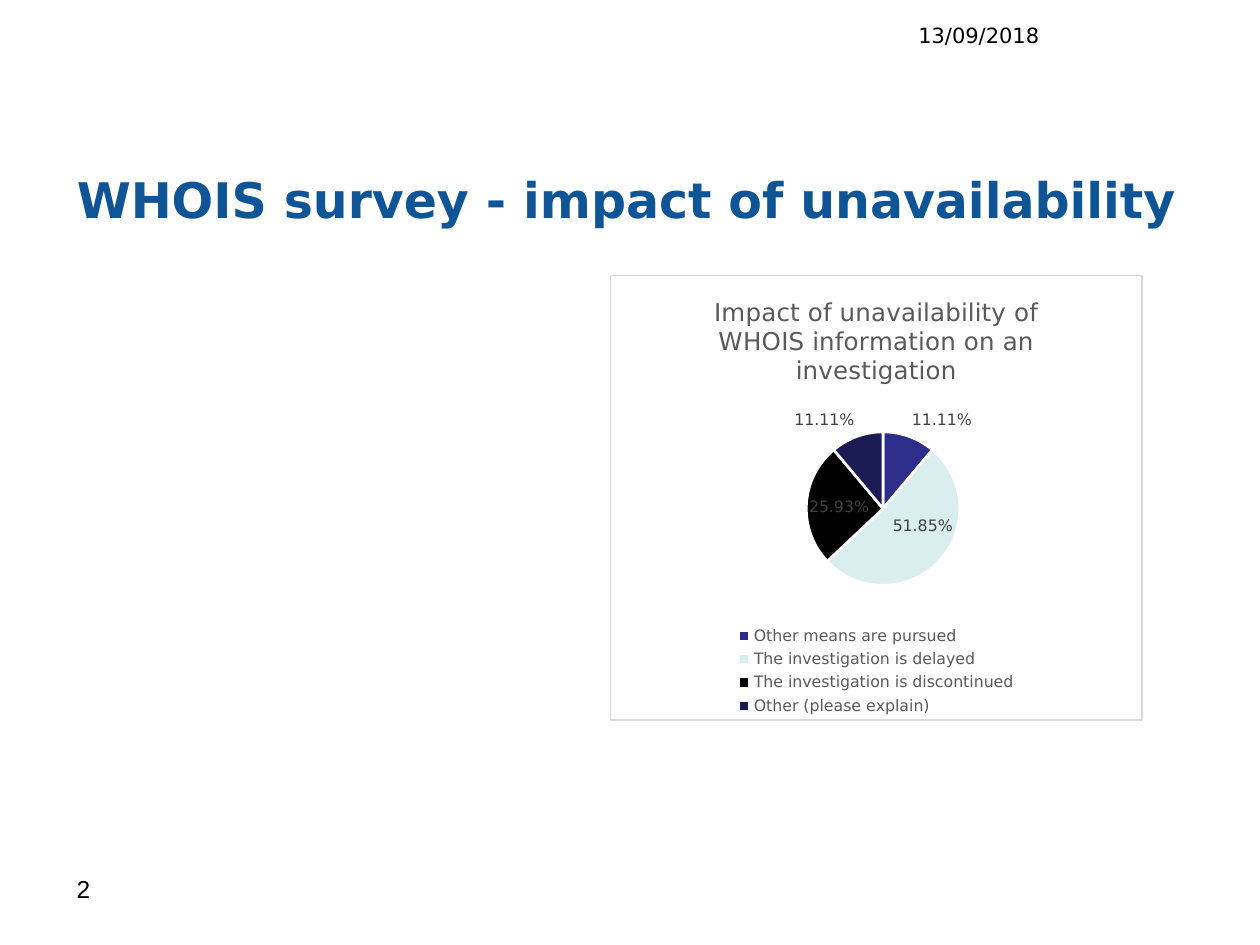
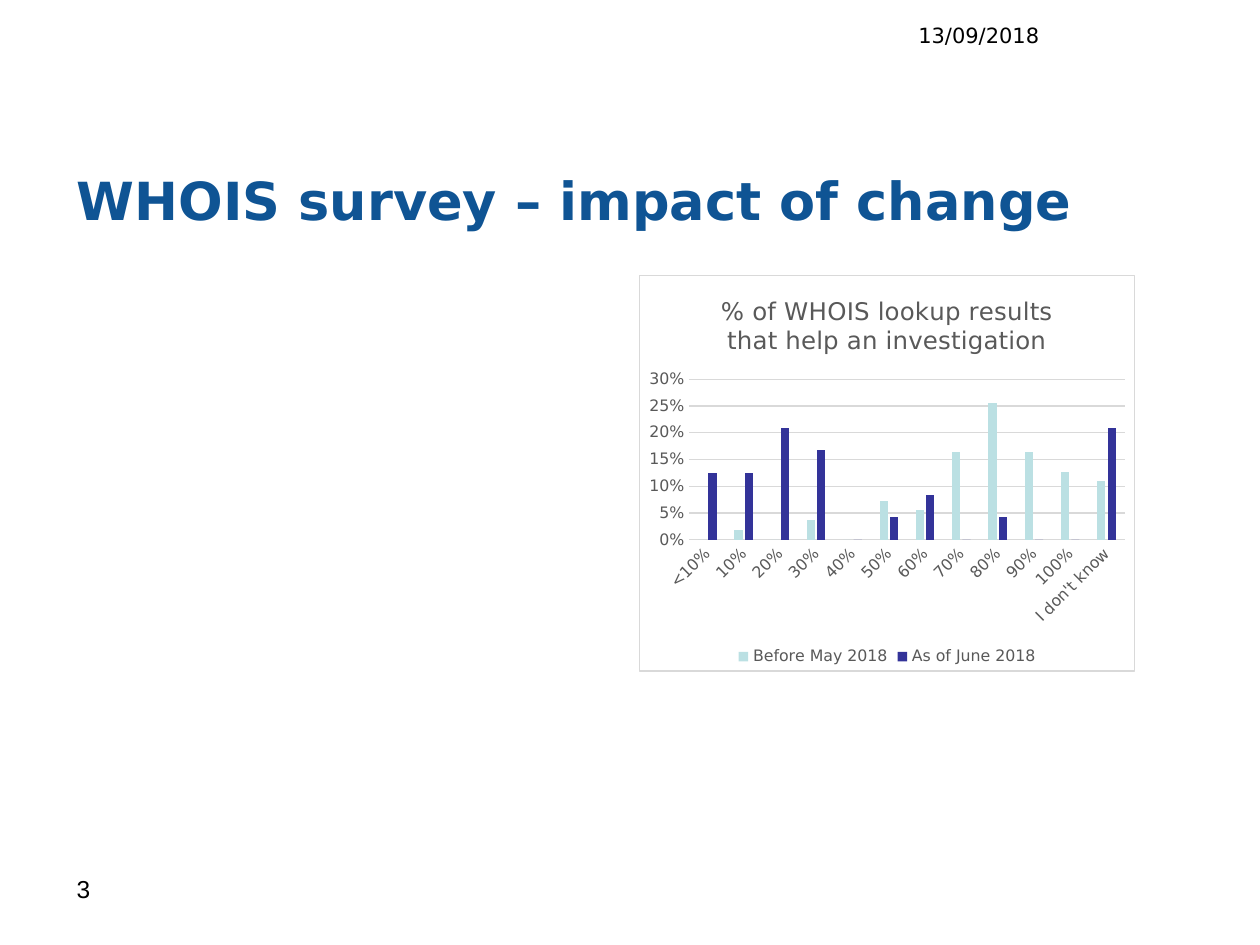
from collections import namedtuple
from dataclasses import dataclass

from lxml import etree
from pptx import Presentation
from pptx.chart import data as chart_data
from pptx.dml.color import RGBColor
from pptx.enum import chart as chart_enum, text
from pptx.oxml import parse_xml
from pptx.oxml.ns import nsdecls, qn
from pptx.util import Inches, Pt

Box = namedtuple("Box", "left top width height")


@dataclass(frozen=True)
class Theme:
    font: str = "DejaVu Sans"
    number_font: str = "Arial"
    title_color: str = "0F5494"
    ink: str = "000000"
    paper: str = "FFFFFF"
    chart_ink: str = "595959"
    label_ink: str = "404040"
    rule: str = "D9D9D9"
    slices: tuple = ("2D2D8A", "DAEDEF", "000000", "1B1B53")
    columns: tuple = ("BBE0E3", "333399")
    date_size: int = 12
    number_size: int = 14
    chart_title_size: int = 14
    chart_size: int = 10
    small_size: int = 9
    rule_width: float = 0.75


THEME = Theme()
TITLE_BOX = Box(0.51, 1.07, 9, 1.02)
DATE_BOX = Box(7.19, 0.13, 2.33, 0.52)
NUMBER_BOX = Box(0.51, 6.89, 2.33, 0.52)
DATE = "13/09/2018"

IMPACTS = {
    "Other means are pursued": 0.1111,
    "The investigation is delayed": 0.5185,
    "The investigation is discontinued": 0.2593,
    "Other (please explain)": 0.1111,
}
HELPFUL_SHARES = ["<10%", *(f"{share}%" for share in range(10, 101, 10)), "I don't know"]
LOOKUPS = {
    "Before May 2018": (0, 0.018, 0, 0.036, 0, 0.073, 0.055, 0.164, 0.255, 0.164, 0.127, 0.109),
    "As of June 2018": (0.125, 0.125, 0.208, 0.167, 0, 0.042, 0.083, 0, 0.042, 0, 0, 0.208),
}


def lengths(box):
    return [Inches(side) for side in box]


def style_font(font, size, color, name=THEME.font, bold=False):
    font.name, font.size, font.bold = name, Pt(size), bold
    font.color.rgb = RGBColor.from_string(color)


def fill_solid(fill, color):
    fill.solid()
    fill.fore_color.rgb = RGBColor.from_string(color)


def draw_line(line, color, width=THEME.rule_width):
    line.color.rgb = RGBColor.from_string(color)
    line.width = Pt(width)


def add_title(page, box, wording, size):
    title = page.shapes.title
    title.left, title.top, title.width, title.height = lengths(box)
    frame = title.text_frame
    frame.word_wrap = True
    frame.auto_size = text.MSO_AUTO_SIZE.NONE
    frame.vertical_anchor = text.MSO_ANCHOR.MIDDLE
    para = frame.paragraphs[0]
    para.alignment = text.PP_ALIGN.LEFT
    properties = para._p.get_or_add_pPr()
    properties.set("marL", str(Inches(0.39)))
    properties.set("indent", str(-Inches(0.39)))
    span = para.add_run()
    span.text = wording
    style_font(span.font, size, THEME.title_color, bold=True)


def add_note(page, box, wording, size, font):
    frame = page.shapes.add_textbox(*lengths(box)).text_frame
    frame.word_wrap = True
    span = frame.paragraphs[0].add_run()
    span.text = wording
    style_font(span.font, size, THEME.ink, font)


def add_page(deck, title, title_size, number):
    """Add a slide with the shared title, date and number."""
    page = deck.slides.add_slide(deck.slide_layouts.get_by_name("Title Only"))
    fill_solid(page.background.fill, THEME.paper)
    add_title(page, TITLE_BOX, title, title_size)
    add_note(page, DATE_BOX, DATE, THEME.date_size, THEME.font)
    add_note(page, NUMBER_BOX, str(number), THEME.number_size, THEME.number_font)
    return page


def frame_chart(chart):
    """Give the chart area a white fill, a thin border and square corners."""
    space = chart.element
    plot = space.find(qn("c:chart"))
    corners = space.find(qn("c:roundedCorners"))
    if corners is None:
        corners = etree.Element(qn("c:roundedCorners"))
        plot.addprevious(corners)
    corners.set("val", "0")
    plot.addnext(parse_xml(
        f'<c:spPr {nsdecls("c", "a")}>'
        f'<a:solidFill><a:srgbClr val="{THEME.paper}"/></a:solidFill>'
        f'<a:ln w="{Pt(THEME.rule_width)}"><a:solidFill>'
        f'<a:srgbClr val="{THEME.rule}"/></a:solidFill></a:ln></c:spPr>'))


def add_survey_chart(page, box, kind, title, categories, series, number_format):
    values = chart_data.CategoryChartData(number_format=number_format)
    values.categories = categories
    for name, shares in series.items():
        values.add_series(name, shares)
    chart = page.shapes.add_chart(kind, *lengths(box), values).chart
    frame_chart(chart)
    style_font(chart.font, THEME.chart_size, THEME.ink)
    chart.has_title = True
    span = chart.chart_title.text_frame.paragraphs[0].add_run()
    span.text = title
    style_font(span.font, THEME.chart_title_size, THEME.chart_ink)
    chart.chart_title.include_in_layout = False
    chart.has_legend = True
    chart.legend.position = chart_enum.XL_LEGEND_POSITION.BOTTOM
    chart.legend.include_in_layout = False
    style_font(chart.legend.font, THEME.small_size, THEME.chart_ink)
    return chart


def add_impact_pie(page, box):
    chart = add_survey_chart(
        page, box, chart_enum.XL_CHART_TYPE.PIE,
        "Impact of unavailability of WHOIS information on an investigation",
        list(IMPACTS), {"Series 1": list(IMPACTS.values())}, "0.00%")
    plot = chart.plots[0]
    plot.vary_by_categories = True
    for index, color in enumerate(THEME.slices):
        piece = plot.series[0].points[index].format
        fill_solid(piece.fill, color)
        draw_line(piece.line, THEME.paper, 1.5)
    labels = plot.series[0].data_labels
    labels.show_value = True
    labels.show_percentage = False
    labels.number_format = "0.00%"
    labels.number_format_is_linked = False
    labels.position = chart_enum.XL_LABEL_POSITION.BEST_FIT
    style_font(labels.font, THEME.small_size, THEME.label_ink)


def style_axis(axis):
    axis.major_tick_mark = axis.minor_tick_mark = chart_enum.XL_TICK_MARK.NONE
    style_font(axis.tick_labels.font, THEME.small_size, THEME.chart_ink)


def add_lookup_columns(page, box):
    chart = add_survey_chart(
        page, box, chart_enum.XL_CHART_TYPE.COLUMN_CLUSTERED,
        "% of WHOIS lookup results that help an investigation",
        HELPFUL_SHARES, LOOKUPS, "0.0%")
    plot = chart.plots[0]
    plot.vary_by_categories = False
    plot.gap_width, plot.overlap = 219, -27
    for series, color in zip(plot.series, THEME.columns):
        fill_solid(series.format.fill, color)

    shares, scale = chart.category_axis, chart.value_axis
    style_axis(shares)
    draw_line(shares.format.line, THEME.rule)
    slant = shares._element.find(qn("c:txPr")).find(qn("a:bodyPr"))
    slant.set("rot", str(-45 * 60000))

    style_axis(scale)
    scale.format.line.fill.background()
    scale.minimum_scale, scale.maximum_scale, scale.major_unit = 0, 0.3, 0.05
    scale.has_major_gridlines = True
    draw_line(scale.major_gridlines.format.line, THEME.rule)
    scale.tick_labels.number_format = "0%"
    scale.tick_labels.number_format_is_linked = False


def main():
    deck = Presentation()
    deck.slide_width, deck.slide_height = Inches(10), Inches(7.5)
    page = add_page(deck, "WHOIS survey - impact of unavailability", 28, 2)
    add_impact_pie(page, Box(4.84, 2.18, 4.23, 3.54))
    page = add_page(deck, "WHOIS survey – impact of change", 30, 3)
    add_lookup_columns(page, Box(5.07, 2.18, 3.94, 3.15))
    deck.save("out.pptx")


if __name__ == "__main__":
    main()
